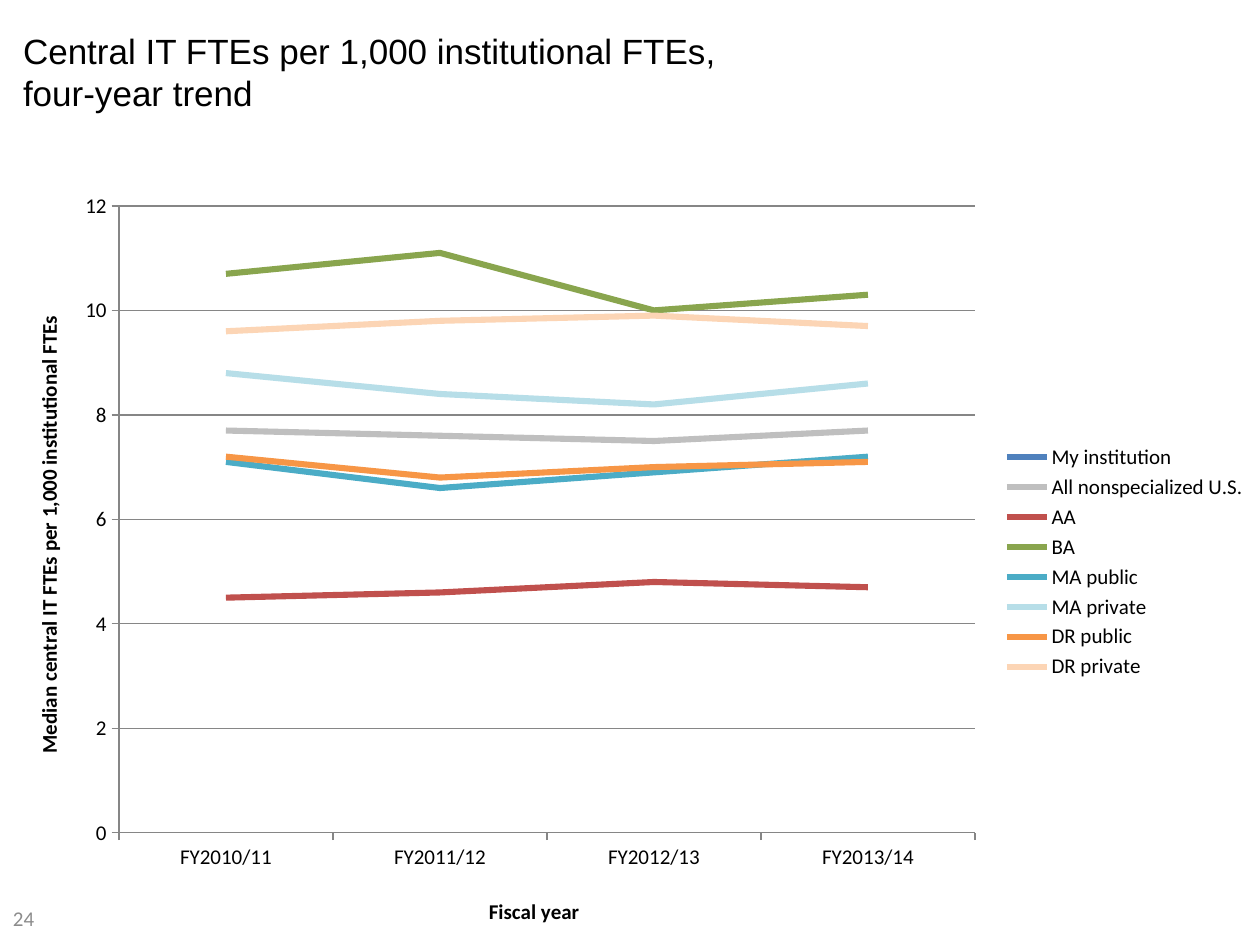
from lxml import etree
from pptx import Presentation
from pptx import util as u
from pptx.chart.data import CategoryChartData
from pptx.dml.color import RGBColor
from pptx.enum import chart as charts, text
from pptx.oxml.ns import qn

EMU_PER_PX = 914400 // 126
PAGE_SIZE = (1260, 945)
CHART_BOX = (0, 179, 1260, 766)
PLOT_BOX = (119, 206, 856, 627)
COLORS = {
    "text": "000000",
    "page_number": "8C8C8C",
    "axis": "868686",
}
YEARS = ["FY2010/11", "FY2011/12", "FY2012/13", "FY2013/14"]
SERIES = [
    ("My institution", "4F81BD", (None, None, None, None)),
    ("All nonspecialized U.S.", "BFBFBF", (7.7, 7.6, 7.5, 7.7)),
    ("AA", "C0504D", (4.5, 4.6, 4.8, 4.7)),
    ("BA", "89A54E", (10.7, 11.1, 10, 10.3)),
    ("MA public", "4BACC6", (7.1, 6.6, 6.9, 7.2)),
    ("MA private", "B7DEE8", (8.8, 8.4, 8.2, 8.6)),
    ("DR public", "F79646", (7.2, 6.8, 7, 7.1)),
    ("DR private", "FCD5B5", (9.6, 9.8, 9.9, 9.7)),
]


def px(value):
    return u.Emu(value * EMU_PER_PX)


def set_all(target, **values):
    for name, value in values.items():
        setattr(target, name, value)


def style_font(font, color, size, name, bold=False):
    set_all(font, size=u.Pt(size), name=name, bold=bold)
    font.color.rgb = RGBColor.from_string(color)


def style_line(line, color, width):
    line.color.rgb = RGBColor.from_string(color)
    line.width = u.Pt(width)


def add_text(page, bounds, words, color, size, font, anchor, margin_top):
    box = page.shapes.add_textbox(*map(px, bounds))
    frame = box.text_frame
    set_all(frame, word_wrap=True, vertical_anchor=anchor,
            margin_left=px(13), margin_top=px(margin_top))
    para = frame.paragraphs[0]
    para.text = words
    for span in para.runs:
        style_font(span.font, color, size, font)


def place_in_chart(element, index, left, top, width=None, height=None):
    """Give a chart part a manual layout from page pixels."""
    for old in element.findall(qn("c:layout")):
        element.remove(old)
    layout = etree.Element(qn("c:layout"))
    manual = etree.SubElement(layout, qn("c:manualLayout"))
    chart_left, chart_top, chart_width, chart_height = CHART_BOX
    values = {"xMode": "edge", "yMode": "edge",
              "x": (left - chart_left) / chart_width,
              "y": (top - chart_top) / chart_height}
    if width:
        values = {"layoutTarget": "inner", **values,
                  "w": width / chart_width, "h": height / chart_height}
    for tag, value in values.items():
        etree.SubElement(manual, qn(f"c:{tag}")).set("val", str(value))
    element.insert(index, layout)


def style_axis(axis, title, left, top, rotation):
    set_all(axis, major_tick_mark=charts.XL_TICK_MARK.OUTSIDE,
            minor_tick_mark=charts.XL_TICK_MARK.NONE)
    style_line(axis.format.line, COLORS["axis"], 0.75)
    frame = axis.axis_title.text_frame
    frame.text = title
    style_font(frame.paragraphs[0].runs[0].font, COLORS["text"], 12, "Calibri", True)
    element = axis.axis_title.element
    element.find(".//" + qn("a:bodyPr")).set("rot", str(rotation * 60000))
    place_in_chart(element, 1, left, top)


def add_trend_chart(page):
    data = CategoryChartData(number_format="0.0")
    data.categories = YEARS
    for name, _, values in SERIES:
        data.add_series(name, values)
    chart = page.shapes.add_chart(
        charts.XL_CHART_TYPE.LINE, *map(px, CHART_BOX), data).chart
    set_all(chart, has_title=False, has_legend=True)
    style_font(chart.font, COLORS["text"], 12, "Calibri")
    set_all(chart.legend, position=charts.XL_LEGEND_POSITION.RIGHT,
            include_in_layout=False)
    plot = chart.plots[0]
    plot.vary_by_categories = False
    for series, (_, color, _) in zip(plot.series, SERIES):
        series.smooth = False
        series.marker.style = charts.XL_MARKER_STYLE.NONE
        style_line(series.format.line, color, 3.5)

    style_axis(chart.category_axis, "Fiscal year", 485, 894, 0)
    scale = chart.value_axis
    style_axis(scale, "Median central IT FTEs per 1,000 institutional FTEs",
               31, 312, -90)
    set_all(scale, minimum_scale=0, maximum_scale=12, major_unit=2,
            has_major_gridlines=True)
    style_line(scale.major_gridlines.format.line, COLORS["axis"], 0.75)
    set_all(scale.tick_labels, number_format="0", number_format_is_linked=False)
    place_in_chart(chart.element.find(".//" + qn("c:plotArea")), 0, *PLOT_BOX)


def main():
    deck = Presentation()
    deck.slide_width, deck.slide_height = map(px, PAGE_SIZE)
    page = deck.slides.add_slide(deck.slide_layouts[6])
    add_text(page, (10, 21, 1178, 126),
             "Central IT FTEs per 1,000 institutional FTEs,\vfour-year trend",
             COLORS["text"], 20, "Arial", text.MSO_ANCHOR.TOP, 9)
    add_trend_chart(page)
    add_text(page, (0, 892, 136, 53), "24",
             COLORS["page_number"], 12, "Calibri", text.MSO_ANCHOR.MIDDLE, 6)
    deck.save("out.pptx")


if __name__ == "__main__":
    main()
